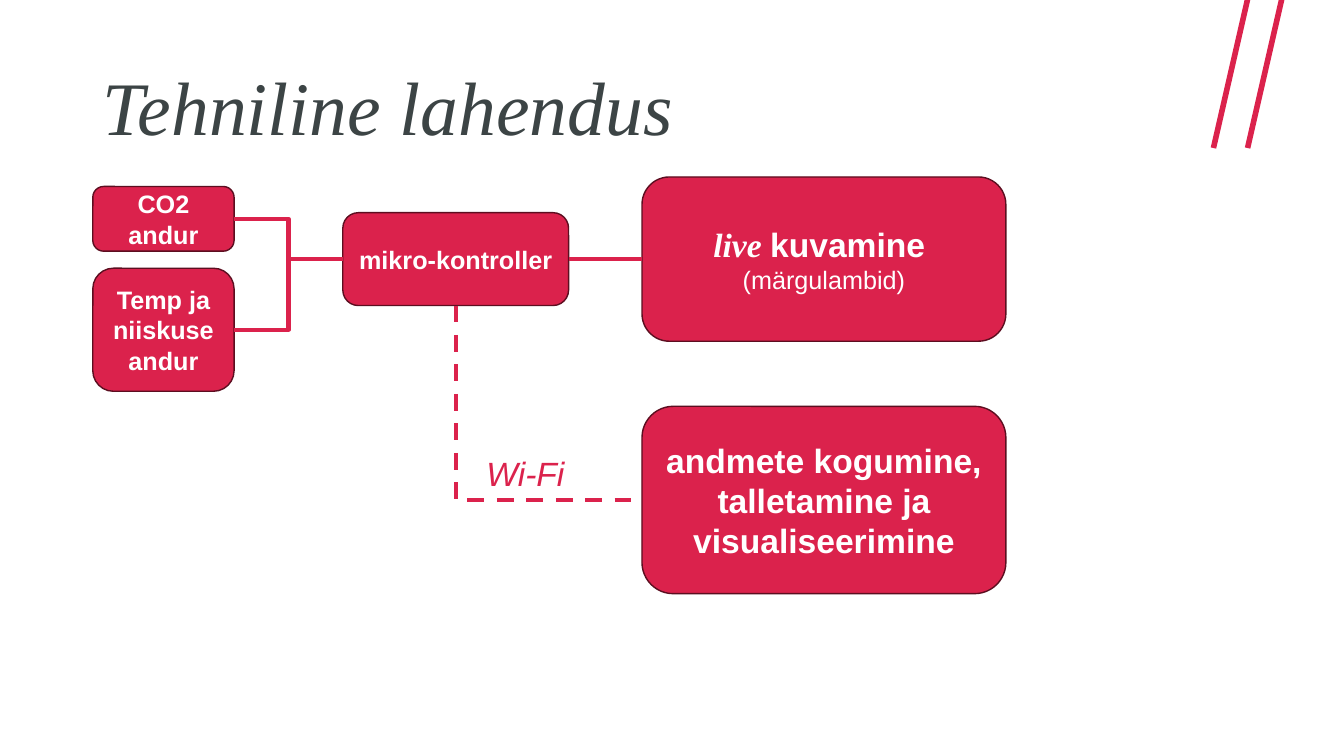
from dataclasses import dataclass

from lxml.etree import SubElement
from pptx import Presentation
from pptx.dml.color import RGBColor
from pptx.enum.dml import MSO_LINE
from pptx.enum.shapes import MSO_CONNECTOR, MSO_SHAPE
from pptx.enum.text import MSO_ANCHOR, PP_ALIGN
from pptx.oxml.ns import qn
from pptx.util import Cm, Pt

TOP, LEFT, BOTTOM, RIGHT = range(4)


@dataclass(frozen=True)
class Theme:
    accent: RGBColor = RGBColor(0xDB, 0x22, 0x4C)
    outline: RGBColor = RGBColor(0x5C, 0x0E, 0x20)
    title: RGBColor = RGBColor(0x3C, 0x44, 0x45)
    white: RGBColor = RGBColor(0xFF, 0xFF, 0xFF)
    sans: str = "Arial"
    serif: str = "Times New Roman"
    title_size: int = 54
    large: int = 24
    small: int = 18


class DiagramSlide:
    def __init__(self, slide, theme):
        self.slide = slide
        self.theme = theme

    def style_run(self, run, size, color, name=None, bold=False, italic=False):
        font = run.font
        font.name = name or self.theme.sans
        font.size = Pt(size)
        font.bold = bold
        font.italic = italic
        font.color.rgb = color

    def label(self, text, left, top, width, height, size, color, name=None):
        """Add an italic text box and return its paragraph."""
        shape = self.slide.shapes.add_textbox(Cm(left), Cm(top), Cm(width), Cm(height))
        text_frame = shape.text_frame
        text_frame.word_wrap = True
        text_frame.text = text
        paragraph = text_frame.paragraphs[0]
        self.style_run(paragraph.runs[0], size, color, name, italic=True)
        return paragraph

    def title(self, text):
        paragraph = self.label(text, 2.34, 1.02, 29.21, 3.68,
                               self.theme.title_size, self.theme.title, self.theme.serif)
        paragraph.line_spacing = 0.8
        self.slide.shapes[-1].text_frame.vertical_anchor = MSO_ANCHOR.MIDDLE

    def box(self, text, left, top, width, height, size):
        """Add a rounded box with bold centred text."""
        shape = self.slide.shapes.add_shape(
            MSO_SHAPE.ROUNDED_RECTANGLE, Cm(left), Cm(top), Cm(width), Cm(height))
        shape.shadow.inherit = False
        shape.fill.solid()
        shape.fill.fore_color.rgb = self.theme.accent
        shape.line.color.rgb = self.theme.outline
        shape.line.width = Pt(1)
        text_frame = shape.text_frame
        text_frame.word_wrap = True
        text_frame.vertical_anchor = MSO_ANCHOR.MIDDLE
        text_frame.text = text
        paragraph = text_frame.paragraphs[0]
        paragraph.alignment = PP_ALIGN.CENTER
        self.style_run(paragraph.runs[0], size, self.theme.white, bold=True)
        return shape

    def line(self, x1=0, y1=0, x2=0, y2=0, width=3, kind=MSO_CONNECTOR.STRAIGHT):
        connector = self.slide.shapes.add_connector(kind, Cm(x1), Cm(y1), Cm(x2), Cm(y2))
        connector.line.color.rgb = self.theme.accent
        connector.line.width = Pt(width)
        SubElement(connector._element.spPr, qn("a:effectLst"))
        return connector

    def link(self, source, source_side, target, target_side, kind=MSO_CONNECTOR.STRAIGHT):
        connector = self.line(kind=kind)
        connector.begin_connect(source, source_side)
        connector.end_connect(target, target_side)
        return connector

    def dashed_corner(self, source, target):
        """Link the bottom of source to the left of target with one bend."""
        connector = self.link(source, BOTTOM, target, LEFT, MSO_CONNECTOR.ELBOW)
        connector.line.dash_style = MSO_LINE.DASH
        properties = connector._element.spPr
        properties.find(qn("a:prstGeom")).set("prst", "bentConnector2")
        # Turned a quarter and mirrored, the bend runs down first, then right
        width, height = connector.width, connector.height
        connector.left += (width - height) // 2
        connector.top += (height - width) // 2
        connector.width, connector.height = height, width
        transform = properties.find(qn("a:xfrm"))
        transform.set("rot", "16200000")
        transform.set("flipH", "1")


def main():
    presentation = Presentation()
    presentation.slide_width = Cm(33.87)
    presentation.slide_height = Cm(19.05)
    theme = Theme()
    diagram = DiagramSlide(
        presentation.slides.add_slide(presentation.slide_layouts[6]), theme)

    # Slanted corner lines
    for x in (32.36, 31.5):
        diagram.line(x, -0.28, x - 0.92, 3.73, width=4)

    diagram.title("Tehniline lahendus")

    # Boxes
    sensors = [
        diagram.box(text, 2.34, top, 3.56, height, theme.small)
        for text, top, height in (("CO2 andur", 4.7, 1.63),
                                  ("Temp ja niiskuse andur", 6.76, 3.1))
    ]
    controller = diagram.box("mikro-kontroller", 8.64, 5.36, 5.69, 2.34, theme.small)
    storage = diagram.box("andmete kogumine, talletamine ja visualiseerimine",
                          16.18, 10.24, 9.17, 4.72, theme.large)
    display = diagram.box("live ", 16.18, 4.46, 9.17, 4.14, theme.large)

    # Mixed text of the display box
    heading = display.text_frame.paragraphs[0]
    diagram.style_run(heading.runs[0], theme.large, theme.white, theme.serif,
                      bold=True, italic=True)
    run = heading.add_run()
    run.text = "kuvamine "
    diagram.style_run(run, theme.large, theme.white, bold=True)
    detail = display.text_frame.add_paragraph()
    detail.text = "(märgulambid)"
    detail.alignment = PP_ALIGN.CENTER
    diagram.style_run(detail.runs[0], theme.small, theme.white)

    # Links
    for sensor in sensors:
        diagram.link(sensor, RIGHT, controller, LEFT, MSO_CONNECTOR.ELBOW)
    diagram.link(controller, RIGHT, display, LEFT)
    diagram.dashed_corner(controller, storage)
    diagram.label("Wi-Fi", 12.01, 11.3, 4.17, 1.27, theme.large, theme.accent)

    presentation.save("out.pptx")


if __name__ == "__main__":
    main()
